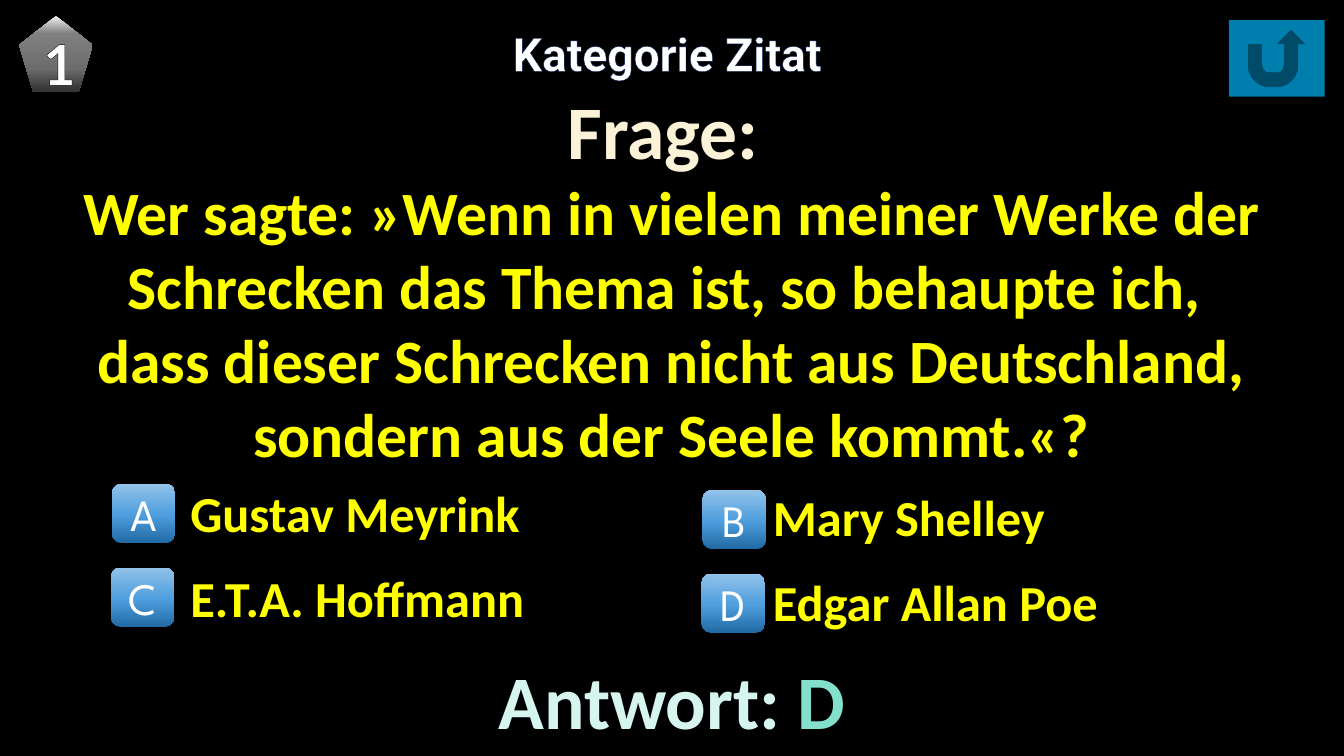
from lxml.etree import SubElement
from pptx import Presentation
from pptx.dml.color import RGBColor
from pptx.enum.shapes import MSO_SHAPE as SHAPE
from pptx.enum.text import MSO_ANCHOR as ANCHOR, MSO_AUTO_SIZE as AUTO, PP_ALIGN as ALIGN
from pptx.oxml import parse_xml
from pptx.oxml.ns import nsdecls, qn
from pptx.util import Pt

BLACK = RGBColor(0x00, 0x00, 0x00)
WHITE = RGBColor(0xFF, 0xFF, 0xFF)
NAVY = RGBColor(0x00, 0x20, 0x60)
CREAM = RGBColor(0xFB, 0xF2, 0xD7)
YELLOW = RGBColor(0xFF, 0xFF, 0x00)
MINT = RGBColor(0xD5, 0xF5, 0xEE)
TEAL = RGBColor(0x82, 0xE0, 0xCD)
CYAN = RGBColor(0x00, 0xB0, 0xF0)
STEEL = [(0, RGBColor(0xF2, 0xF2, 0xF2)), (23, RGBColor(0x80, 0x80, 0x80)),
         (69, RGBColor(0x6D, 0x6D, 0x6D)), (97, RGBColor(0x36, 0x36, 0x36))]
BLUES = [(0, RGBColor(0x20, 0x6A, 0xA5)), (48, RGBColor(0x4F, 0x9E, 0xDD)),
         (100, RGBColor(0x92, 0xC3, 0xEA))]

WIDTH, HEIGHT = 960, 540
HEADING = dict(size=Pt(54), name="Calibri", bold=True)
QUESTION = dict(size=Pt(44), name="Calibri", bold=True)
OPTION = dict(size=Pt(36), name="Calibri", bold=True)
TITLE = dict(size=Pt(33), name="Roboto", bold=True)
NUMBER = dict(size=Pt(40), name="Lato", bold=True)
LETTER = dict(size=Pt(32), name="League Spartan", bold=False)


def add_run(p, text, look, color, outline=None):
    r = p.add_run()
    r.text = text
    for key, value in look.items():
        setattr(r.font, key, value)
    r.font.color.rgb = color
    if outline:
        line_color, width = outline
        r.font._element.insert(0, parse_xml(
            f'<a:ln {nsdecls("a")} w="{Pt(width)}"><a:solidFill>'
            f'<a:srgbClr val="{line_color}"/></a:solidFill></a:ln>'))


def add_text(s, box, align=ALIGN.CENTER):
    tf = s.shapes.add_textbox(*map(Pt, box)).text_frame
    tf.word_wrap = True
    tf.auto_size = AUTO.SHAPE_TO_FIT_TEXT
    tf.paragraphs[0].alignment = align
    return tf


def add_plain_shape(s, kind, box):
    sp = s.shapes.add_shape(kind, *map(Pt, box))
    sp.shadow.inherit = False
    sp.line.fill.background()
    return sp


def add_badge(s, kind, box, stops, angle, text, look, outline=None):
    sp = add_plain_shape(s, kind, box)
    marks = "".join(f'<a:gs pos="{pos * 1000}"><a:srgbClr val="{color}"/></a:gs>'
                    for pos, color in stops)
    sp._element.spPr.find(qn("a:prstGeom")).addnext(parse_xml(
        f'<a:gradFill {nsdecls("a")} rotWithShape="1"><a:gsLst>{marks}</a:gsLst>'
        f'<a:lin ang="{angle * 60000}" scaled="0"/></a:gradFill>'))
    tf = sp.text_frame
    tf.vertical_anchor = ANCHOR.MIDDLE
    p = tf.paragraphs[0]
    p.alignment = ALIGN.CENTER
    add_run(p, text, look, WHITE, outline)


def add_header(s, x, y, w, number, category):
    # Category title
    tf = add_text(s, (x + 19.4, y + 14.4, w - 45.6, 47.5))
    add_run(tf.paragraphs[0], category, TITLE, WHITE, (NAVY, 0.52))
    # Return button, translucent with a soft shadow
    sp = add_plain_shape(s, SHAPE.ACTION_BUTTON_RETURN, (x + w - 82.3, y + 14.4, 68.4, 54.7))
    sp.fill.solid()
    sp.fill.fore_color.rgb = CYAN
    color = sp._element.spPr.find(qn("a:solidFill"))[0]
    SubElement(color, qn("a:alpha"), val="72000")
    sp._element.spPr.find(qn("a:effectLst")).append(parse_xml(
        f'<a:outerShdw {nsdecls("a")} blurRad="{Pt(4.5)}" dist="{Pt(1.5)}" dir="5400000" '
        f'rotWithShape="0"><a:srgbClr val="{BLACK}"><a:alpha val="48000"/>'
        f'</a:srgbClr></a:outerShdw>'))
    # Question number
    add_badge(s, SHAPE.REGULAR_PENTAGON, (x + 13.7, y + 11.5, 52.6, 54), STEEL, 90,
              number, NUMBER, (BLACK, 1.06))


def add_question(s, box, heading, lines):
    tf = add_text(s, box)
    p = tf.paragraphs[0]
    for key, value in dict(marL=Pt(169.2), indent=-Pt(169.2)).items():
        p._p.get_or_add_pPr().set(key, str(value))
    add_run(p, heading, HEADING, CREAM)
    p = tf.add_paragraph()
    p.alignment = ALIGN.CENTER
    for i, line in enumerate(lines):
        if i:
            p.add_line_break()
        add_run(p, line, QUESTION, YELLOW)


def add_options(s, x, y, text_box, options):
    # Answer texts
    tf = add_text(s, text_box, ALIGN.LEFT)
    for i, (letter, name) in enumerate(options):
        p = tf.add_paragraph() if i else tf.paragraphs[0]
        p.space_after = Pt(18)
        add_run(p, name, OPTION, YELLOW)
        # Letter button
        add_badge(s, SHAPE.ROUNDED_RECTANGLE, (x - 0.7 * i, y + 59.8 * i, 45.4, 42.5),
                  BLUES, 270, letter, LETTER)


def add_answer(s, box, label, letter):
    p = add_text(s, box).paragraphs[0]
    add_run(p, label, HEADING, MINT)
    add_run(p, letter, HEADING, TEAL)


def main():
    prs = Presentation()
    prs.slide_width, prs.slide_height = Pt(WIDTH), Pt(HEIGHT)
    s = prs.slides.add_slide(prs.slide_layouts[6])
    s.background.fill.solid()
    s.background.fill.fore_color.rgb = BLACK

    add_header(s, 0, 0, WIDTH, "1", "Kategorie Zitat")
    add_question(s, (0, 56.2, WIDTH, 285.8), "Frage: ", [
        "Wer sagte: »Wenn in vielen meiner Werke der Schrecken das Thema ist, so behaupte ich, ",
        "dass dieser Schrecken nicht aus Deutschland, sondern aus der Seele kommt.«?"])
    add_options(s, 79.9, 345.6, (128.9, 340.6, 294.5, 113),
                [("A", "Gustav Meyrink"), ("C", "E.T.A. Hoffmann")])
    add_options(s, 501.8, 349.9, (545, 343.4, 302.4, 113),
                [("B", "Mary Shelley"), ("D", "Edgar Allan Poe")])
    add_answer(s, (0, 463.7, WIDTH, 72.7), "Antwort: ", "D")
    prs.save("out.pptx")


if __name__ == "__main__":
    main()
